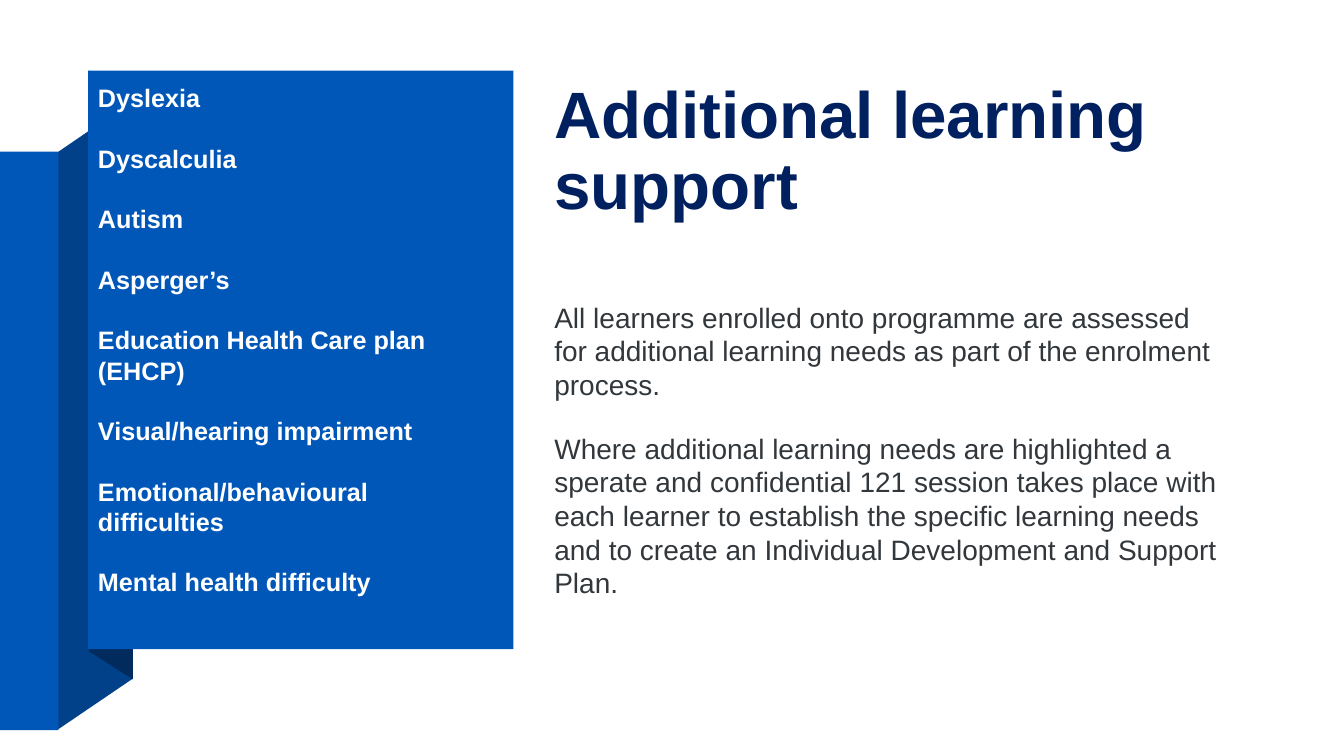
import pptx
import pptx.util
import pptx.dml.color
import pptx.enum.shapes
import pptx.enum.text

Cm = pptx.util.Cm
Pt = pptx.util.Pt
RGBColor = pptx.dml.color.RGBColor
ANCHOR = pptx.enum.text.MSO_ANCHOR

BLUE = RGBColor(0x00, 0x57, 0xB8)
FOLD_BLUE = RGBColor(0x00, 0x41, 0x8A)
DEEP_BLUE = RGBColor(0x00, 0x2B, 0x5C)
TITLE_NAVY = RGBColor(0x00, 0x20, 0x60)
BODY_GREY = RGBColor(0x32, 0x37, 0x3C)
WHITE = RGBColor(0xFF, 0xFF, 0xFF)

NEEDS = [
    "Dyslexia",
    "Dyscalculia",
    "Autism",
    "Asperger’s",
    "Education Health Care plan (EHCP)",
    "Visual/hearing impairment",
    "Emotional/behavioural difficulties",
    "Mental health difficulty",
]
BODY = [
    "All learners enrolled onto programme are assessed for additional learning "
    "needs as part of the enrolment process.",
    "Where additional learning needs are highlighted a sperate and confidential "
    "121 session takes place with each learner to establish the specific learning "
    "needs and to create an Individual Development and Support Plan.",
]


class SlideBuilder:
    font = "Arial"
    paragraph_gap = Pt(21.6)

    def __init__(self, slide):
        self.slide = slide

    def paint(self, sp, color):
        sp.shadow.inherit = False
        sp.fill.solid()
        sp.fill.fore_color.rgb = color
        sp.line.fill.background()

    def rect(self, x, y, w, h, color):
        sp = self.slide.shapes.add_shape(
            pptx.enum.shapes.MSO_SHAPE.RECTANGLE, Cm(x), Cm(y), Cm(w), Cm(h))
        self.paint(sp, color)

    def polygon(self, points, color):
        """Draw a closed outline through points given in centimetres."""
        start, *rest = [(Cm(x), Cm(y)) for x, y in points]
        fb = self.slide.shapes.build_freeform(*start, scale=1.0)
        fb.add_line_segments(rest, close=True)
        self.paint(fb.convert_to_shape(), color)

    def text(self, x, y, w, h, paragraphs, size, color,
             bold=False, anchor=ANCHOR.TOP, line_spacing=None):
        tf = self.slide.shapes.add_textbox(Cm(x), Cm(y), Cm(w), Cm(h)).text_frame
        tf.word_wrap = True
        tf.vertical_anchor = anchor
        for i, words in enumerate(paragraphs):
            p = tf.add_paragraph() if i else tf.paragraphs[0]
            p.text = words
            if i:
                p.space_before = self.paragraph_gap
            if line_spacing:
                p.line_spacing = line_spacing
            p.font.name = self.font
            p.font.size = Pt(size)
            p.font.bold = bold
            p.font.color.rgb = color


def main():
    prs = pptx.Presentation()
    prs.slide_width, prs.slide_height = Cm(33.87), Cm(19.05)
    s = SlideBuilder(prs.slides.add_slide(prs.slide_layouts[6]))

    # Folded ribbon behind the list panel
    s.polygon([(1.45, 18.39), (3.35, 17.1), (3.35, 2.54), (1.45, 3.84)], FOLD_BLUE)
    s.rect(0, 3.82, 1.47, 14.58, BLUE)
    s.polygon([(2.24, 16.41), (3.35, 17.12), (3.35, 2.51), (2.24, 1.78)], DEEP_BLUE)
    s.rect(2.22, 1.78, 10.72, 14.58, BLUE)

    s.text(13.72, 7.44, 17.55, 7.95, BODY, 20, BODY_GREY)
    s.text(13.72, 2.21, 17.75, 3.3, ["Additional learning support"], 46.8, TITLE_NAVY,
           bold=True, anchor=ANCHOR.MIDDLE, line_spacing=0.9)
    s.text(2.22, 1.96, 9.98, 13.41, NEEDS, 18, WHITE, bold=True)

    prs.save("out.pptx")


if __name__ == "__main__":
    main()
